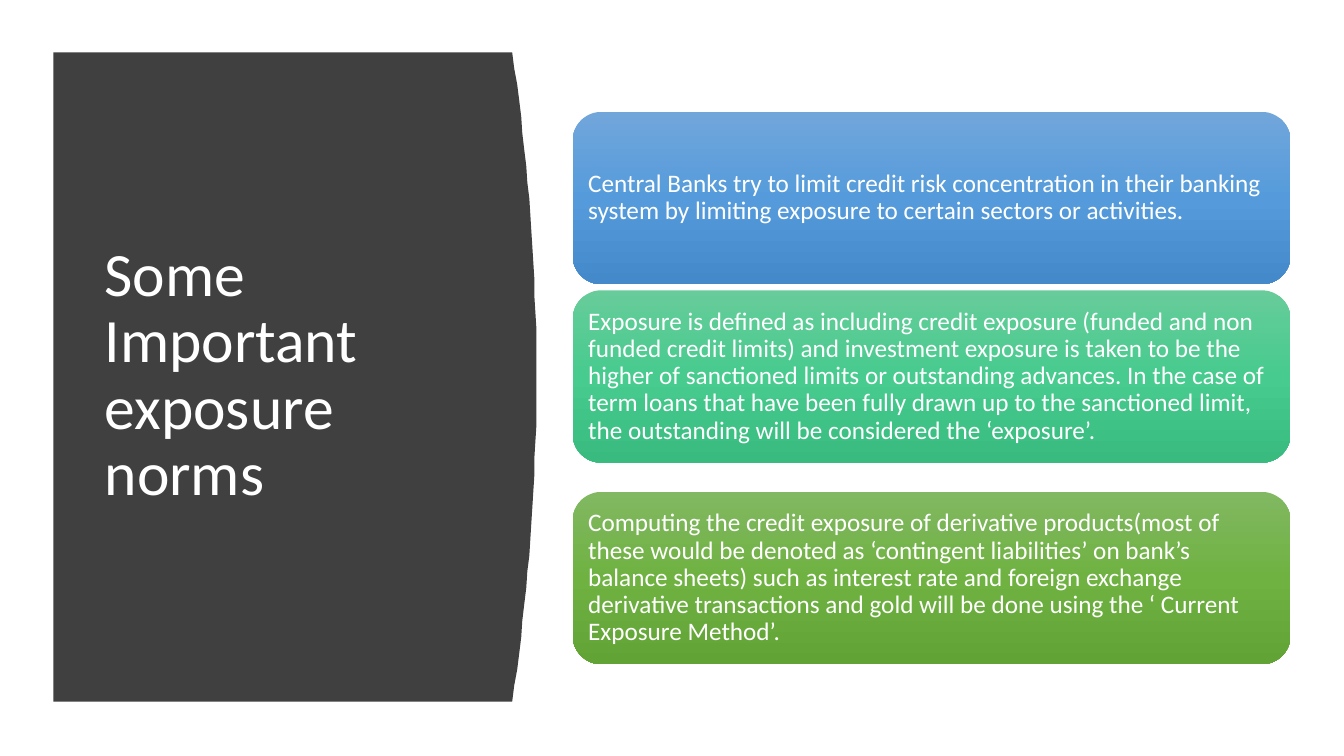
from copy import deepcopy

from pptx import Presentation
from pptx.dml.color import RGBColor as RGB
from pptx.enum.shapes import MSO_SHAPE as SHAPE
from pptx.enum.text import MSO_ANCHOR as ANCHOR, PP_ALIGN as ALIGN
from pptx.oxml.ns import qn
from pptx.util import Pt

PX = 9144  # EMU per px, 100 px to the inch

THEME = {
    "font": "Calibri",
    "text": "FFFFFF",
    "panel": "404040",
    "title_size": 44,
    "card_size": 18,
    "blue": ("71A6DB", "559BDB", "448ACA"),
    "teal": ("67CC9A", "47CB8E", "39BB7F"),
    "green": ("81B861", "6FB242", "62A336"),
}


def write_text(frame, text, size):
    frame.word_wrap = True
    frame.vertical_anchor = ANCHOR.MIDDLE
    para = frame.paragraphs[0]
    para.alignment = ALIGN.LEFT
    para.line_spacing = 0.9
    span = para.add_run()
    span.text = text
    span.font.name = THEME["font"]
    span.font.size = Pt(size)
    span.font.color.rgb = RGB.from_string(THEME["text"])


def fill_gradient(shape, colors):
    """Vertical gradient with three evenly spaced stops."""
    shape.fill.gradient()
    shape.fill.gradient_angle = 270
    stop_list = shape._element.spPr.find(".//" + qn("a:gsLst"))
    stop_list.append(deepcopy(stop_list[-1]))
    for index, (stop, color) in enumerate(zip(shape.fill.gradient_stops, colors)):
        stop.position = index / 2
        stop.color.rgb = RGB.from_string(color)


deck = Presentation()
deck.slide_width, deck.slide_height = 1333 * PX, 750 * PX
page = deck.slides.add_slide(deck.slide_layouts[6])

# Dark panel with a bulging right edge
left, top, bottom = 53, 52, 696
edge, bulge, steps = 508, 24, 40
curve = []
for step in range(steps + 1):
    share = step / steps
    offset = bulge * (1 - (2 * share - 1) ** 2)
    curve.append((round(edge + offset, 1), round(top + (bottom - top) * share, 1)))
outline = page.shapes.build_freeform(left, top, scale=PX)
outline.add_line_segments(curve + [(left, bottom)], close=True)
panel = outline.convert_to_shape()
panel.shadow.inherit = False
panel.fill.solid()
panel.fill.fore_color.rgb = RGB.from_string(THEME["panel"])
panel.line.fill.background()

# Title
title = page.shapes.add_textbox(94 * PX, 111 * PX, 374 * PX, 524 * PX)
write_text(title.text_frame, "Some Important exposure norms", THEME["title_size"])

# Cards: top, colours, text
cards = [
    (111, "blue",
     "Central Banks try to limit credit risk concentration in their banking "
     "system by limiting exposure to certain sectors or activities."),
    (288, "teal",
     "Exposure is defined as including credit exposure (funded and non funded "
     "credit limits) and investment exposure is taken to be the higher of "
     "sanctioned limits or outstanding advances. In the case of term loans that "
     "have been fully drawn up to the sanctioned limit, the outstanding will be "
     "considered the ‘exposure’."),
    (488, "green",
     "Computing the credit exposure of derivative products(most of these would "
     "be denoted as ‘contingent liabilities’ on bank’s balance sheets) such as "
     "interest rate and foreign exchange derivative transactions and gold will "
     "be done using the ‘ Current Exposure Method’."),
]
for card_top, colors, text in cards:
    card = page.shapes.add_shape(
        SHAPE.ROUNDED_RECTANGLE, 568 * PX, card_top * PX, 712 * PX, 171 * PX)
    card.shadow.inherit = False
    card.line.fill.background()
    fill_gradient(card, THEME[colors])
    frame = card.text_frame
    frame.margin_left = frame.margin_right = 7 * PX
    frame.margin_top = frame.margin_bottom = 7 * PX
    write_text(frame, text, THEME["card_size"])

deck.save("out.pptx")
